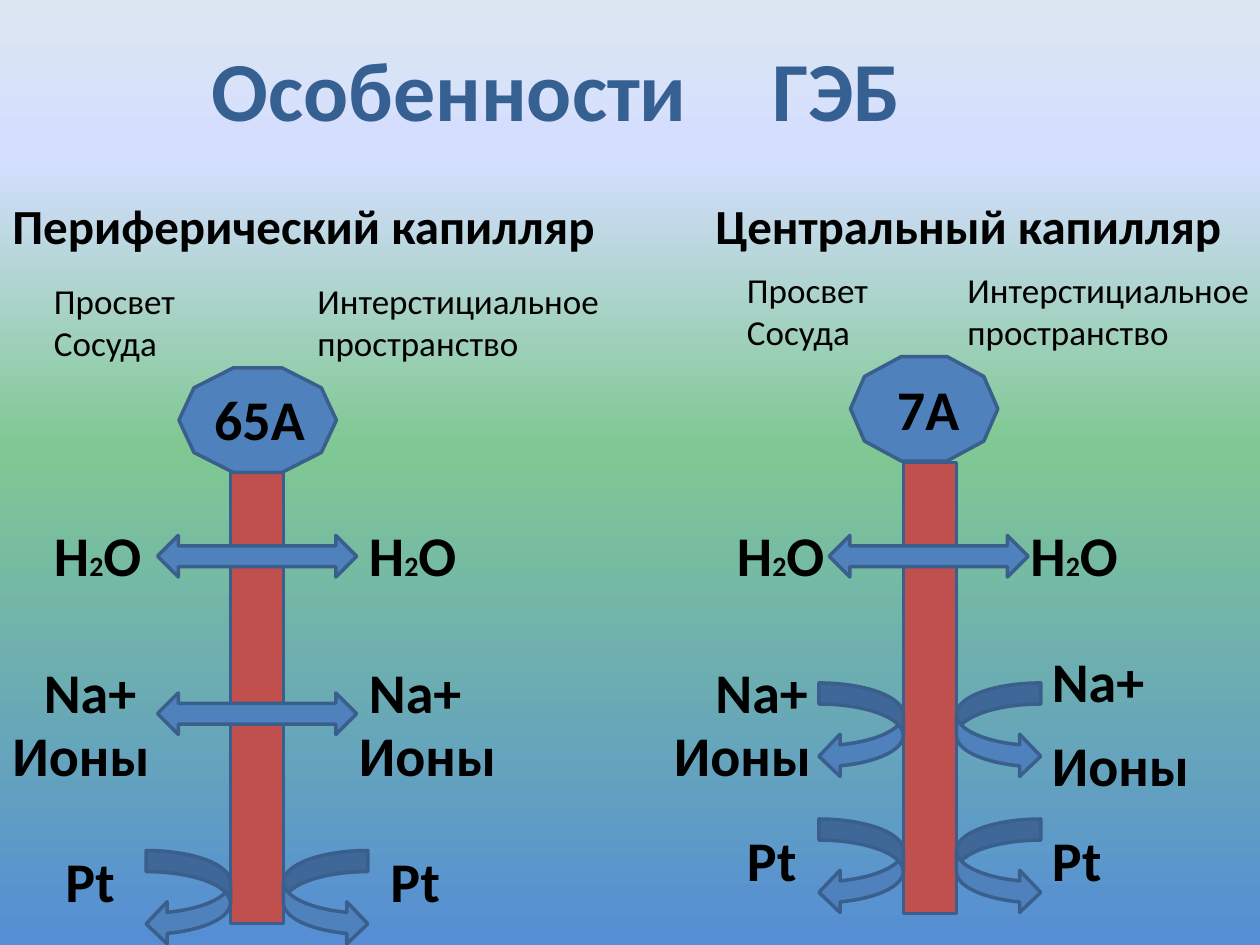
from lxml import etree
from pptx import Presentation
from pptx.dml.color import RGBColor
from pptx.enum.shapes import MSO_SHAPE
from pptx.enum.text import MSO_AUTO_SIZE
from pptx.oxml.ns import qn
from pptx.util import Inches, Pt

WALL = MSO_SHAPE.FLOWCHART_PROCESS
PORE = MSO_SHAPE.DECAGON
EXCHANGE = MSO_SHAPE.LEFT_RIGHT_ARROW
RETURN_LEFT = MSO_SHAPE.CURVED_LEFT_ARROW
RETURN_RIGHT = MSO_SHAPE.CURVED_RIGHT_ARROW
FIT_TEXT = MSO_AUTO_SIZE.SHAPE_TO_FIT_TEXT

FONT = "Calibri"
BLUE, RED, OUTLINE = "4F81BD", "C0504D", "3A5F8C"
BLACK, TITLE_BLUE = "000000", "376092"
BACKGROUND_STOPS = [(0, "558ED5"), (53, "80C893"), (83, "D4DEFF"), (100, "DCE6F2")]
WALL_WIDTH = 0.42
RETURN_WIDTH = 0.67

PERIPHERAL = {
    "wall": (1.83, 3.75),
    "pore": (1.42, 2.92, 1.25),
    "exchanges": [(1.25, 4.25), (1.25, 5.5)],
    "returns": [6.75],
    "heading": ("Периферический капилляр", 0, 1.5, 4.92),
    "spaces": [("Просвет Сосуда", 0.33, 2.17, 1.5),
               ("Интерстициальное пространство", 2.42, 2.17, 2.58)],
    "labels": [(" 65А", 1.5, 3, 1.08),
               ("Na+", 0.25, 5.17, 1), ("Na+", 2.83, 5.17, 1),
               ("Ионы", 0, 5.67, 1.42), ("Ионы", 2.75, 5.67, 1.42),
               ("Pt", 0.42, 6.67, 0.92), ("Pt", 3, 6.67, 0.92)],
    "water": [0.33, 2.83],
}
CENTRAL = {
    "wall": (7.17, 3.67),
    "pore": (6.75, 2.83, 1.17),
    "exchanges": [(6.58, 4.25)],
    "returns": [5.42, 6.5],
    "heading": ("Центральный капилляр", 5.58, 1.5, 4.83),
    "spaces": [("Просвет Сосуда", 5.83, 2.08, 1.5),
               ("Интерстициальное пространство", 7.58, 2.08, 2.58)],
    "labels": [(" 7А", 6.92, 2.92, 0.83),
               ("Na+", 5.58, 5.17, 1), ("Na+", 8.25, 5.08, 1),
               ("Ионы", 5.25, 5.67, 1.42), ("Ионы", 8.25, 5.75, 1.42),
               ("Pt", 5.83, 6.5, 0.92), ("Pt", 8.25, 6.5, 0.92)],
    "water": [5.75, 8.08],
}


def color(hex_value):
    return RGBColor.from_string(hex_value)


def paint_background(slide):
    fill = slide.background.fill
    fill.gradient()
    fill.gradient_angle = 90
    stop_list = next(slide.element.iter(qn("a:gsLst")))
    for stop in list(stop_list):
        stop_list.remove(stop)
    for percent, hex_value in BACKGROUND_STOPS:
        stop = etree.SubElement(stop_list, qn("a:gs"), pos=str(percent * 1000))
        etree.SubElement(stop, qn("a:srgbClr"), val=hex_value)


def add_figure(slide, kind, left, top, width, height, fill=BLUE):
    shape = slide.shapes.add_shape(
        kind, Inches(left), Inches(top), Inches(width), Inches(height))
    shape.shadow.inherit = False
    shape.fill.solid()
    shape.fill.fore_color.rgb = color(fill)
    shape.line.color.rgb = color(OUTLINE)
    shape.line.width = Pt(2)


def add_text(slide, text, left, top, width, height=0.64, size=32, bold=True,
             hex_value=BLACK):
    shape = slide.shapes.add_textbox(
        Inches(left), Inches(top), Inches(width), Inches(height))
    text_frame = shape.text_frame
    text_frame.word_wrap = True
    text_frame.auto_size = FIT_TEXT
    text_frame.text = text
    paragraph = text_frame.paragraphs[0]
    for run in paragraph.runs:
        format_run(run, size, bold, hex_value)
    return paragraph


def format_run(run, size, bold=True, hex_value=BLACK):
    run.font.name = FONT
    run.font.size = Pt(size)
    run.font.bold = bold
    run.font.color.rgb = color(hex_value)


def add_water(slide, left):
    paragraph = add_text(slide, "H", left, 4.08, 1.42)
    for text, size in (("2", 16), ("O", 32)):
        run = paragraph.add_run()
        run.text = text
        format_run(run, size)


def add_title(slide):
    paragraph = add_text(slide, "Особенности\tГЭБ", 1.58, 0.25, 7.25, 0.91,
                         size=48, hex_value=TITLE_BLUE)
    properties = paragraph._p.get_or_add_pPr()
    tab_list = etree.SubElement(properties, qn("a:tabLst"))
    etree.SubElement(tab_list, qn("a:tab"), pos=str(Inches(4.45)), algn="l")


def add_capillary(slide, capillary):
    wall_left, wall_top = capillary["wall"]
    add_figure(slide, WALL, wall_left, wall_top, WALL_WIDTH, 3.58, RED)
    for left, top in capillary["exchanges"]:
        add_figure(slide, EXCHANGE, left, top, 1.58, 0.33)
    for top in capillary["returns"]:
        add_figure(slide, RETURN_LEFT, wall_left - RETURN_WIDTH, top, RETURN_WIDTH, 0.75)
        add_figure(slide, RETURN_RIGHT, wall_left + WALL_WIDTH, top, RETURN_WIDTH, 0.75)
    add_figure(slide, PORE, *capillary["pore"], 0.83)

    add_text(slide, *capillary["heading"], height=0.57, size=28)
    for space in capillary["spaces"]:
        add_text(slide, *space, height=0.77, size=20, bold=False)
    for label in capillary["labels"]:
        add_text(slide, *label)
    for left in capillary["water"]:
        add_water(slide, left)


def main():
    presentation = Presentation()
    presentation.slide_width = Inches(10)
    presentation.slide_height = Inches(7.5)
    slide = presentation.slides.add_slide(presentation.slide_layouts[6])
    paint_background(slide)
    add_title(slide)
    for capillary in (PERIPHERAL, CENTRAL):
        add_capillary(slide, capillary)
    presentation.save("out.pptx")


if __name__ == "__main__":
    main()
